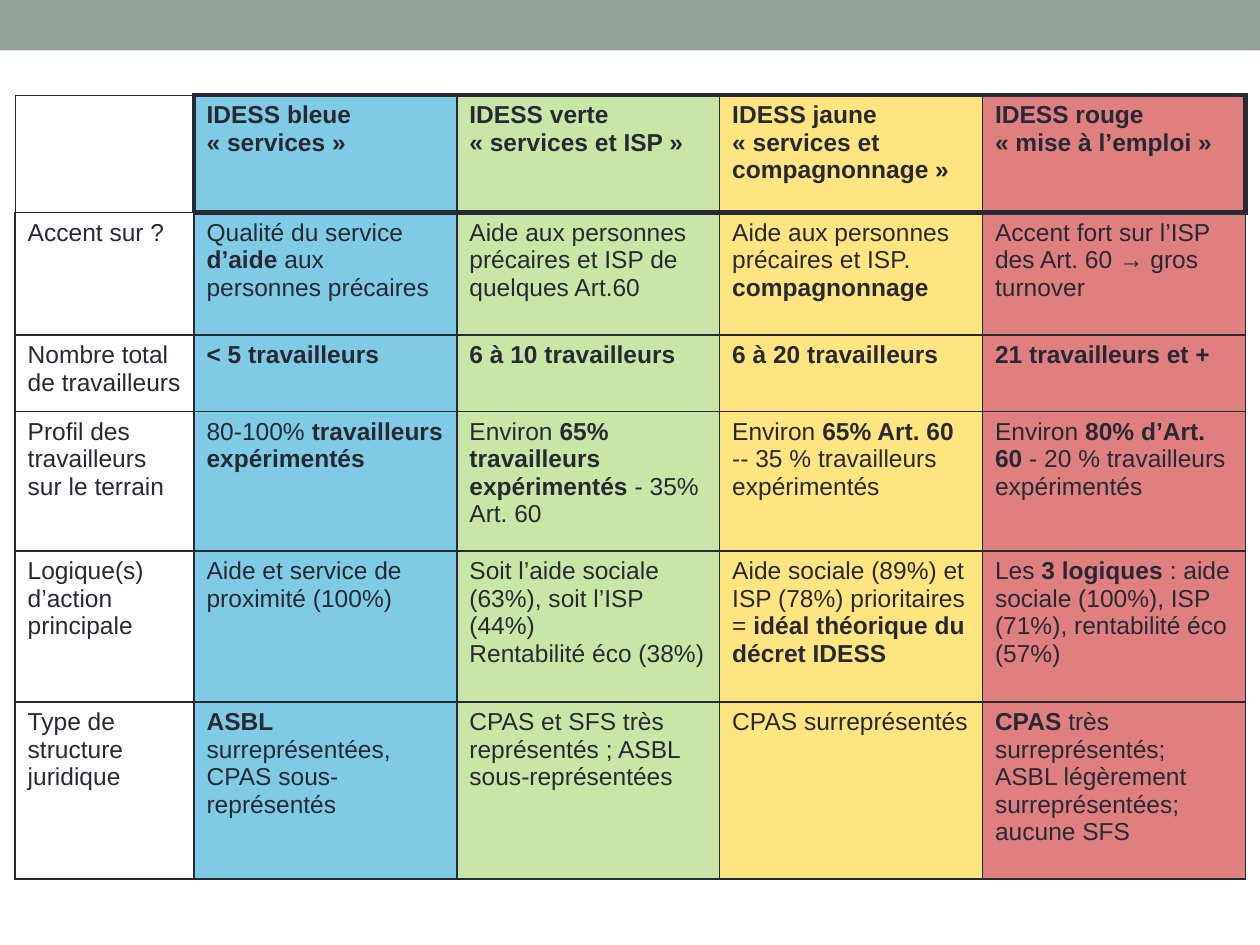
import dataclasses
import typing

import lxml.etree
import pptx
import pptx.dml.color
import pptx.enum.shapes
import pptx.oxml.ns
import pptx.util

INK = "292934"
BAND_COLOUR = "93A299"
THIN, NORMAL, THICK = 0.25, 1, 3

# Percentages of the slide's width and height
TABLE_LEFT, TABLE_TOP = 1.2, 10.05
COLUMN_SHARES = [14.2] + [20.86] * 4
BAND_SHARE = 5.33


@dataclasses.dataclass
class Row:
    height: float  # percentage of the slide's height
    texts: list[str]  # ** switches bold on and off, a line break starts a paragraph


COLUMN_COLOURS = [None, "0099CC", "92D050", "FFCC00", "C00000"]

ROWS = [
    Row(12.44, [
        "",
        "**IDESS bleue\n« services »**",
        "**IDESS verte\n« services et ISP »**",
        "**IDESS jaune\n« services et compagnonnage »**",
        "**IDESS rouge\n« mise à l’emploi »**",
    ]),
    Row(12.96, [
        "Accent sur ?",
        "Qualité du service **d’aide** aux personnes précaires",
        "Aide aux personnes précaires et ISP de quelques Art.60",
        "Aide aux personnes précaires et ISP.\n**compagnonnage**",
        "Accent fort sur l’ISP des Art. 60 → gros turnover",
    ]),
    Row(8.1, [
        "Nombre total de travailleurs",
        "**< 5 travailleurs**",
        "**6 à 10 travailleurs**",
        "**6 à 20 travailleurs**",
        "**21 travailleurs et +**",
    ]),
    Row(14.76, [
        "Profil des travailleurs sur le terrain",
        "80-100% **travailleurs expérimentés**",
        "Environ **65% travailleurs expérimentés **- 35% Art. 60",
        "Environ **65% Art. 60** -- 35 % travailleurs expérimentés",
        "Environ **80% d’Art. 60 **- 20 % travailleurs expérimentés",
    ]),
    Row(15.98, [
        "Logique(s) d’action principale",
        "Aide et service de proximité (100%)",
        "Soit l’aide sociale (63%), soit l’ISP (44%)\nRentabilité éco (38%)",
        "Aide sociale (89%) et ISP (78%) prioritaires\n= **idéal théorique du décret IDESS**",
        "Les **3 logiques **: aide sociale (100%), ISP (71%), rentabilité éco (57%)",
    ]),
    Row(18.73, [
        "Type de structure juridique",
        "**ASBL** surreprésentées, CPAS sous-représentés",
        "CPAS et SFS très représentés ; ASBL sous-représentées",
        "CPAS surreprésentés",
        "**CPAS** très surreprésentés; ASBL légèrement surreprésentées; aucune SFS",
    ]),
]

presentation = pptx.Presentation()
presentation.slide_width = pptx.util.Inches(10)
presentation.slide_height = pptx.util.Inches(7.5)


def colour(value: str) -> pptx.dml.color.RGBColor:
    return pptx.dml.color.RGBColor.from_string(value)


def across(share: float) -> int:
    return round(presentation.slide_width * share / 100)


def down(share: float) -> int:
    return round(presentation.slide_height * share / 100)


def write_text(text_frame: typing.Any, text: str, *, size: float = 14,
               font: str = "Arial", ink: str = INK) -> None:
    bold = False
    for line_number, line in enumerate(text.split("\n")):
        paragraph = text_frame.paragraphs[0] if line_number == 0 else text_frame.add_paragraph()
        for part_number, part in enumerate(line.split("**")):
            if part_number:
                bold = not bold
            if part:
                run = paragraph.add_run()
                run.text = part
                run.font.size = pptx.util.Pt(size)
                run.font.name = font
                run.font.bold = bold
                run.font.color.rgb = colour(ink)


def add_element(parent: typing.Any, tag: str, **attributes: str) -> typing.Any:
    return lxml.etree.SubElement(parent, pptx.oxml.ns.qn(tag), attributes)


def set_borders(cell: typing.Any, widths: dict[str, float]) -> None:
    properties = cell._tc.get_or_add_tcPr()
    for side, width in widths.items():
        line = add_element(properties, f"a:ln{side}", w=str(int(pptx.util.Pt(width))))
        add_element(add_element(line, "a:solidFill"), "a:srgbClr", val=INK)


def border_widths(row: int, column: int) -> dict[str, float]:
    widths = dict.fromkeys("LRTB", NORMAL)
    if row == 0 and column == 0:
        widths = {"L": THIN, "R": THICK, "T": THIN, "B": THIN}
    elif row == 0:
        widths["T"] = widths["B"] = THICK
        if column == 1:
            widths["L"] = THICK
        if column == len(COLUMN_SHARES) - 1:
            widths["R"] = THICK
    elif row == 1:
        widths["T"] = THICK if column else THIN
    return widths


def fill_cell(cell: typing.Any, value: typing.Optional[str]) -> None:
    if value is None:
        cell.fill.background()
        return
    cell.fill.solid()
    cell.fill.fore_color.rgb = colour(value)
    # Half-transparent fill
    fill = cell._tc.tcPr.find(pptx.oxml.ns.qn("a:solidFill"))
    add_element(fill[0], "a:alpha", val="50000")


def add_band(slide: typing.Any) -> None:
    band = slide.shapes.add_shape(pptx.enum.shapes.MSO_SHAPE.RECTANGLE,
                                  0, 0, across(100), down(BAND_SHARE))
    band.shadow.inherit = False
    band.fill.solid()
    band.fill.fore_color.rgb = colour(BAND_COLOUR)
    band.line.fill.background()


def add_comparison_table(slide: typing.Any) -> None:
    table = slide.shapes.add_table(
        len(ROWS), len(COLUMN_SHARES), across(TABLE_LEFT), down(TABLE_TOP),
        across(sum(COLUMN_SHARES)), down(sum(row.height for row in ROWS))).table
    table.first_row = table.horz_banding = False
    for column, share in enumerate(COLUMN_SHARES):
        table.columns[column].width = across(share)
    for row_number, row in enumerate(ROWS):
        table.rows[row_number].height = down(row.height)
        for column, text in enumerate(row.texts):
            cell = table.cell(row_number, column)
            write_text(cell.text_frame, text)
            set_borders(cell, border_widths(row_number, column))
            fill_cell(cell, COLUMN_COLOURS[column])


# Top band, then the comparison table
slide = presentation.slides.add_slide(presentation.slide_layouts[6])
add_band(slide)
add_comparison_table(slide)
presentation.save("out.pptx")
